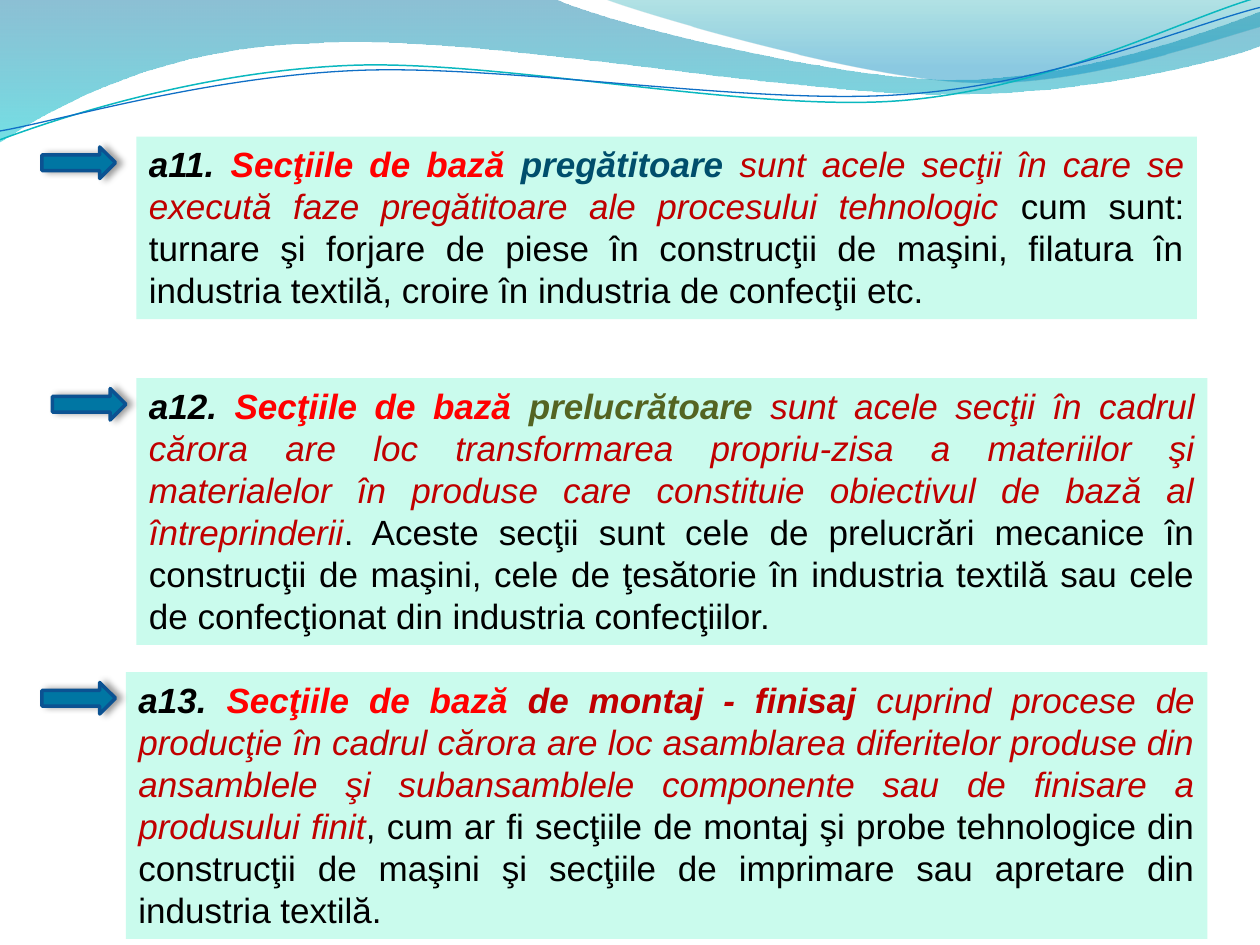
from math import cos, radians, sin

from lxml import etree
from pptx import Presentation
from pptx.dml.color import RGBColor
from pptx.enum.shapes import MSO_SHAPE
from pptx.enum.text import MSO_ANCHOR, MSO_AUTO_SIZE, PP_ALIGN
from pptx.oxml import parse_xml
from pptx.oxml.ns import nsdecls, qn
from pptx.util import Pt

RECT, ARROW = MSO_SHAPE.RECTANGLE, MSO_SHAPE.RIGHT_ARROW
TOP, JUSTIFY, GROW = MSO_ANCHOR.TOP, PP_ALIGN.JUSTIFY, MSO_AUTO_SIZE.SHAPE_TO_FIT_TEXT

BLACK = RGBColor(0x00, 0x00, 0x00)
RED = RGBColor(0xFF, 0x00, 0x00)
CRIMSON = RGBColor(0xC0, 0x00, 0x00)
NAVY = RGBColor(0x00, 0x4E, 0x6C)
OLIVE = RGBColor(0x54, 0x64, 0x22)
MINT = RGBColor(0xCA, 0xFB, 0xED)
BLUE = RGBColor(0x00, 0x76, 0xA3)
EDGE = RGBColor(0x0B, 0x52, 0x92)
TEAL = RGBColor(0x0A, 0xB8, 0xBF)
AZURE = RGBColor(0x0F, 0x6F, 0xC6)

# Outlines in points: a pair is a straight step, six numbers a cubic curve.
# Gradient stops: place, colour, opacity in percent.
WAVES = [
    ([(0, 0), (316.8, -0.7), (342.7, 12.2, 478.1, 45.4, 545.8, 45.4),
      (614.2, 45.4, 689.8, 18.7, 720, 6.5), (720.7, 25.9),
      (707.8, 31.7, 626.4, 54.7, 537.1, 54), (447.8, 54, 275, 20.2, 185, 24.5),
      (92.9, 25.9, 33.1, 59.8, -0.7, 81.4)],
     [(0, RGBColor(0x00, 0x74, 0xA1), 45), (1, RGBColor(0x00, 0xC6, 0xCF), 55)]),
    ([(344.9, -0.7), (366.5, 7.9, 491, 44.6, 553.7, 46.8),
      (616.3, 49.7, 691.9, 23, 720, 15.1), (720, 0)],
     [(0, RGBColor(0x00, 0xA1, 0xA9), 30), (0.8, RGBColor(0x00, 0x8B, 0xBF), 45)]),
]
TILT = -2.7  # degrees, both strands
STRANDS = [
    ([(0, 79.9), (34.6, 67, 113.8, 41, 199.4, 37.4),
      (284.4, 33.8, 427, 64.1, 513.4, 57.6),
      (599.8, 51.1, 675.4, 10.8, 718.6, -1.4)], TEAL, 0.85),
    ([(0, 74.9), (33.8, 69.1, 118.1, 43.9, 203.8, 40.3),
      (290.2, 36.7, 429.8, 60.5, 516.2, 54),
      (601.9, 48.2, 677.5, 15.1, 720, 4.3)], AZURE, 0.75),
]

# Box, arrow's left edge, label, key term with its colour, definition, examples
ITEMS = [
    ((78, 78, 606, 104.4), 24, "a11. ", "pregătitoare ", NAVY,
     "sunt acele secţii în care se execută faze pregătitoare ale procesului "
     "tehnologic ",
     "cum sunt: turnare şi forjare de piese în construcţii de maşini, filatura "
     "în industria textilă, croire în industria de confecţii etc."),
    ((78, 216, 612, 152.6), 30, "a12. ", "prelucrătoare ", OLIVE,
     "sunt acele secţii în cadrul cărora are loc transformarea propriu-zisa a "
     "materiilor şi materialelor în produse care constituie obiectivul de bază "
     "al întreprinderii",
     ". Aceste secţii sunt cele de prelucrări mecanice în construcţii de maşini, "
     "cele de ţesătorie în industria textilă sau cele de confecţionat din "
     "industria confecţiilor."),
    ((72, 384, 618, 152.6), 24, "a13. ", "de montaj - finisaj ", CRIMSON,
     "cuprind procese de producţie în cadrul cărora are loc asamblarea "
     "diferitelor produse din ansamblele şi subansamblele componente sau de "
     "finisare a produsului finit",
     ", cum ar fi secţiile de montaj şi probe tehnologice din construcţii de "
     "maşini şi secţiile de imprimare sau apretare din industria textilă."),
]


def turn(steps, angle):
    """Turn an outline around the midpoint between its two ends."""
    mid = [(a + b) / 2 for a, b in zip(steps[0], steps[-1][-2:])]
    c, s = cos(radians(angle)), sin(radians(angle))
    done = []
    for step in steps:
        flat = []
        for x, y in zip(step[::2], step[1::2]):
            dx, dy = x - mid[0], y - mid[1]
            flat += [mid[0] + dx * c - dy * s, mid[1] + dx * s + dy * c]
        done.append(tuple(flat))
    return done


def add_path(slide, box, steps, close):
    left, top = box
    ends = [(Pt(left + step[-2]), Pt(top + step[-1])) for step in steps]
    pen = slide.shapes.build_freeform(*ends[0])
    pen.add_line_segments(ends[1:], close=close)
    shape = pen.convert_to_shape()
    shape.shadow.inherit = False
    # Bend the straight segments that have control points
    lines = list(shape._element.iter(qn("a:lnTo")))
    for line, step in zip(lines, steps[1:]):
        if len(step) == 6:
            curve = etree.Element(qn("a:cubicBezTo"))
            for x, y in zip(step[::2], step[1::2]):
                etree.SubElement(curve, qn("a:pt"),
                                 x=str(Pt(left + x) - shape.left),
                                 y=str(Pt(top + y) - shape.top))
            line.getparent().replace(line, curve)
    return shape


def add_header(slide, box):
    # Translucent waves
    for steps, stops in WAVES:
        wave = add_path(slide, box, steps, True)
        wave.line.fill.background()
        wave.fill.gradient()
        wave.fill.gradient_angle = 270
        for stop, (place, color, _) in zip(wave.fill.gradient_stops, stops):
            stop.position = place
            stop.color.rgb = color
        for node, (_, _, alpha) in zip(wave._element.spPr.iter(qn("a:srgbClr")), stops):
            node.append(parse_xml(f'<a:alpha {nsdecls("a")} val="{alpha * 1000}"/>'))
    # Thin strands
    for steps, color, width in STRANDS:
        strand = add_path(slide, box, turn(steps, -TILT), False)
        strand.rotation = TILT
        strand.fill.background()
        strand.line.color.rgb = color
        strand.line.width = Pt(width)


def add_arrow(slide, left, top):
    arrow = slide.shapes.add_shape(ARROW, Pt(left), Pt(top), Pt(42), Pt(18))
    arrow.fill.solid()
    arrow.fill.fore_color.rgb = BLUE
    arrow.line.color.rgb = EDGE
    arrow.line.width = Pt(2)
    arrow.shadow.inherit = False
    arrow._element.spPr.find(qn("a:effectLst")).append(parse_xml(
        f'<a:outerShdw {nsdecls("a")} blurRad="{Pt(4)}" dist="{Pt(3)}" dir="0">'
        '<a:srgbClr val="000000"><a:alpha val="40000"/></a:srgbClr></a:outerShdw>'))


def add_item(slide, box, edge, label, term, tint, text, more):
    # Text panel
    panel = slide.shapes.add_shape(RECT, *map(Pt, box))
    panel.shadow.inherit = False
    panel.fill.solid()
    panel.fill.fore_color.rgb = MINT
    panel.line.fill.background()
    frame = panel.text_frame
    frame.word_wrap = True
    frame.auto_size = GROW
    frame.vertical_anchor = TOP
    para = frame.paragraphs[0]
    para.alignment = JUSTIFY
    for words, color, bold, italic in [
            (label, BLACK, True, True), ("Secţiile de bază ", RED, True, True),
            (term, tint, True, True), (text, CRIMSON, False, True),
            (more, BLACK, False, False)]:
        run = para.add_run()
        run.text = words
        font = run.font
        font.name, font.size = "Arial", Pt(20)
        font.bold, font.italic = bold, italic
        font.color.rgb = color
    # Arrow beside the first line
    add_arrow(slide, edge, box[1] + 6)


def main():
    deck = Presentation()
    deck.slide_width, deck.slide_height = Pt(720), Pt(540)
    slide = deck.slides.add_slide(deck.slide_layouts[6])
    add_header(slide, (0, 0))
    for item in ITEMS:
        add_item(slide, *item)
    deck.save("out.pptx")


if __name__ == "__main__":
    main()
